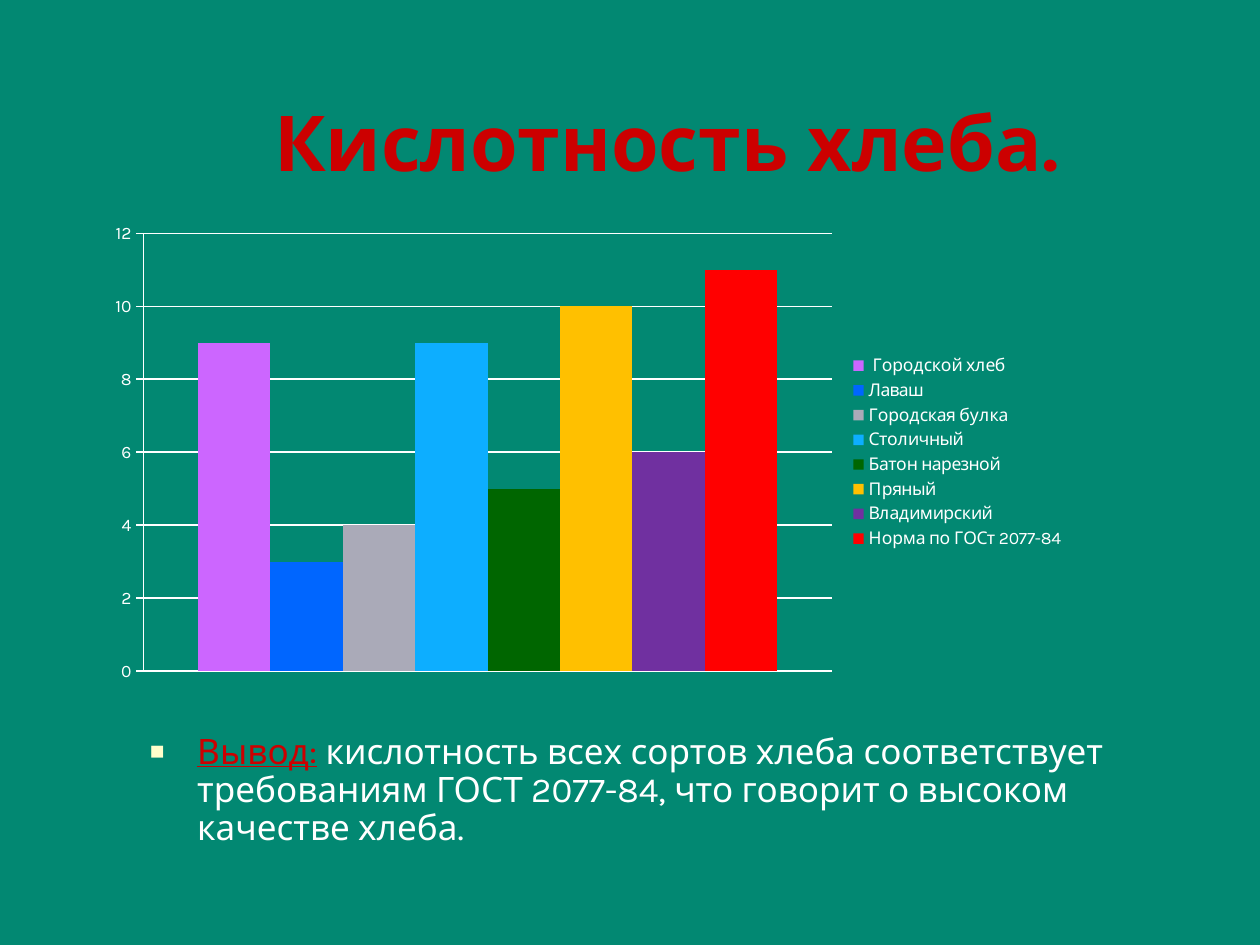
"""Build a slide on the acidity of bread, with a column chart and a conclusion."""
from lxml.etree import SubElement
from pptx import Presentation
from pptx.chart.data import CategoryChartData
from pptx.dml.color import RGBColor
from pptx.enum.chart import XL_CHART_TYPE, XL_LEGEND_POSITION, XL_TICK_MARK
from pptx.enum.text import MSO_ANCHOR, MSO_AUTO_SIZE, PP_ALIGN
from pptx.oxml.ns import qn
from pptx.util import Pt

theme = {
    "face": "Karla",
    "back": "028872",
    "accent": "CC0000",
    "text": "FFFFFF",
    "bullet": "FFFFCC",
    "title": 44,
    "body": 20,
    "chart": 10,
}
breads = [
    (" Городской хлеб", 9, "CC66FF"),
    ("Лаваш", 3, "0066FF"),
    ("Городская булка", 4, "AAAAB8"),
    ("Столичный", 9, "0DAEFF"),
    ("Батон нарезной", 5, "006600"),
    ("Пряный", 10, "FFC000"),
    ("Владимирский", 6, "7030A0"),
    ("Норма по ГОСт 2077-84", 11, "FF0000"),
]


def assign(item, values):
    for name, value in values.items():
        setattr(item, name, value)


def style(font, size, color, **extra):
    assign(font, {"name": theme["face"], "size": Pt(theme[size]), **extra})
    font.color.rgb = RGBColor.from_string(theme[color])


deck = Presentation()
assign(deck, {"slide_width": Pt(720), "slide_height": Pt(540)})
slide = deck.slides.add_slide(deck.slide_layouts[1])
slide.background.fill.solid()
slide.background.fill.fore_color.rgb = RGBColor.from_string(theme["back"])

title, body = slide.shapes.title, slide.placeholders[1]
boxes = [
    (title, (84, 24, 594, 113), MSO_ANCHOR.MIDDLE),
    (body, (78.5, 416, 594, 106.5), MSO_ANCHOR.TOP),
]
for box, place, anchor in boxes:
    assign(box, dict(zip(("left", "top", "width", "height"), map(Pt, place))))
    assign(box.text_frame, {
        "word_wrap": True,
        "auto_size": MSO_AUTO_SIZE.NONE,
        "vertical_anchor": anchor,
    })

head = title.text_frame.paragraphs[0]
head.alignment = PP_ALIGN.CENTER
run = head.add_run()
run.text = "Кислотность хлеба."
style(run.font, "title", "accent", bold=True)

para = body.text_frame.paragraphs[0]
assign(para, {"line_spacing": 0.9, "space_before": Pt(4)})
parts = [
    ("Вывод:", "accent", True),
    (" кислотность всех сортов хлеба соответствует требованиям ГОСТ 2077-84, "
     "что говорит о высоком качестве хлеба.", "text", False),
]
for words, color, line in parts:
    run = para.add_run()
    run.text = words
    style(run.font, "body", color, underline=line)

props = para._p.get_or_add_pPr()
for name, value in {"marL": Pt(27), "indent": Pt(-27)}.items():
    props.set(name, str(value))
tint = SubElement(props, qn("a:buClr"))
SubElement(tint, qn("a:srgbClr"), val=theme["bullet"])
SubElement(props, qn("a:buSzPct"), val="70000")
SubElement(props, qn("a:buChar"), char="■")

data = CategoryChartData()
data.categories = ["1"]
for name, value, color in breads:
    data.add_series(name, [value])
frame = slide.shapes.add_chart(
    XL_CHART_TYPE.COLUMN_CLUSTERED, Pt(54), Pt(122.4), Pt(561.6), Pt(272), data)
chart = frame.chart
assign(chart, {"has_title": False, "has_legend": True})
style(chart.font, "chart", "text")
assign(chart.legend, {
    "position": XL_LEGEND_POSITION.RIGHT,
    "include_in_layout": False,
})

plot = chart.plots[0]
assign(plot, {"gap_width": 150, "overlap": 0, "vary_by_categories": False})
for series, (name, value, color) in zip(plot.series, breads):
    series.format.fill.solid()
    series.format.fill.fore_color.rgb = RGBColor.from_string(color)

chart.category_axis.visible = False
axis = chart.value_axis
assign(axis, {
    "minimum_scale": 0,
    "maximum_scale": 12,
    "major_unit": 2,
    "has_major_gridlines": True,
    "major_tick_mark": XL_TICK_MARK.OUTSIDE,
    "minor_tick_mark": XL_TICK_MARK.NONE,
})
for line in (axis.format.line, axis.major_gridlines.format.line):
    line.width = Pt(0.75)
    line.color.rgb = RGBColor.from_string(theme["text"])

area = chart._chartSpace.chart.plotArea
for old in area.findall(qn("c:layout")):
    area.remove(old)
layout = SubElement(area, qn("c:layout"))
area.insert(0, layout)
manual = SubElement(layout, qn("c:manualLayout"))
rules = {
    "layoutTarget": "inner", "xMode": "edge", "yMode": "edge",
    "x": 0.05, "y": 0.04, "w": 0.7, "h": 0.92,
}
for name, value in rules.items():
    SubElement(manual, qn(f"c:{name}"), val=str(value))

deck.save("out.pptx")
